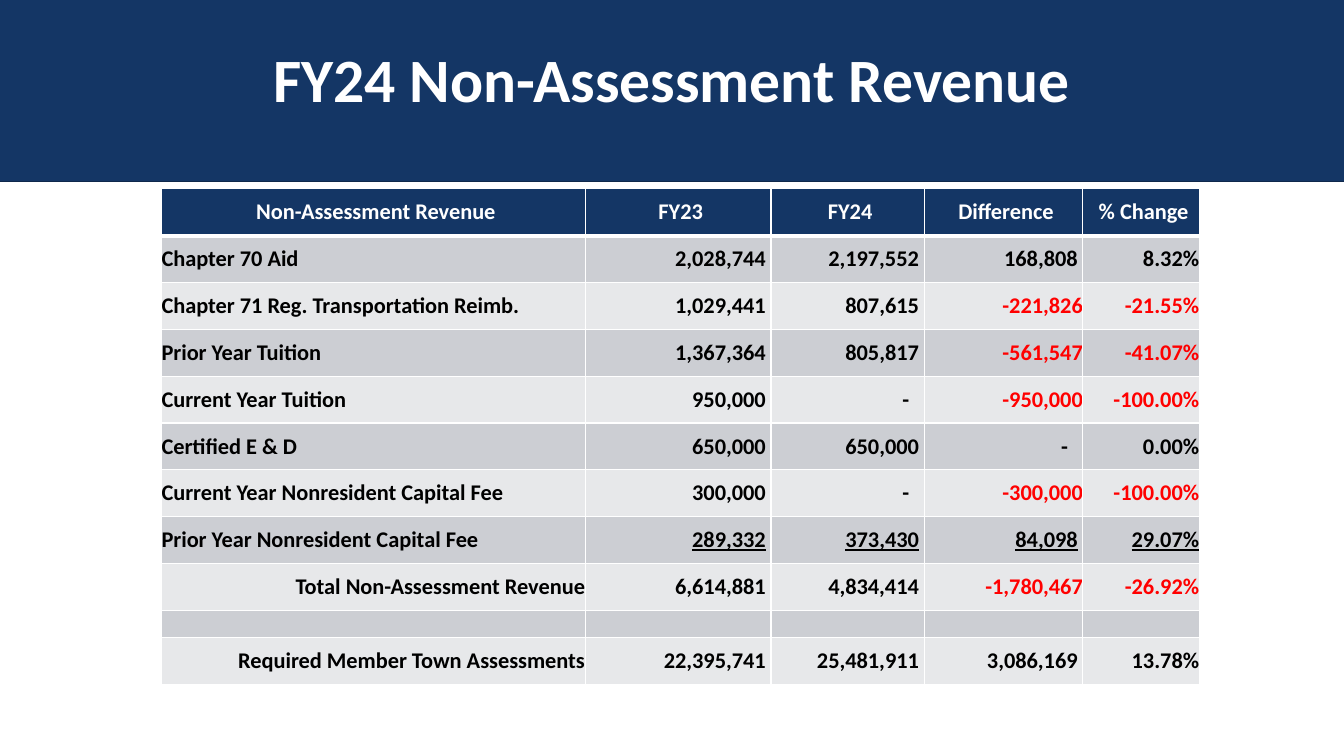
"""Builds the FY24 non-assessment revenue slide."""
import pptx
import pptx.dml.color
import pptx.enum.shapes
import pptx.enum.text
import pptx.oxml
import pptx.oxml.ns
import pptx.util
from pptx.util import Cm, Pt

RGBColor = pptx.dml.color.RGBColor
NAVY = RGBColor(0x14, 0x36, 0x65)
DARK_NAVY = RGBColor(0x0F, 0x28, 0x4B)
WHITE = RGBColor(0xFF, 0xFF, 0xFF)
BLACK = RGBColor(0x00, 0x00, 0x00)
RED = RGBColor(0xFF, 0x00, 0x00)
DARK_BAND = RGBColor(0xCC, 0xCE, 0xD3)
LIGHT_BAND = RGBColor(0xE7, 0xE8, 0xEA)
ALIGN = pptx.enum.text.PP_ALIGN
MIDDLE = pptx.enum.text.MSO_ANCHOR.MIDDLE

REVENUE = [
    ("Non-Assessment Revenue", "FY23", "FY24", "Difference", "% Change"),
    ("Chapter 70 Aid", "2,028,744", "2,197,552", "168,808", "8.32%"),
    ("Chapter 71 Reg. Transportation Reimb.", "1,029,441", "807,615", "-221,826", "-21.55%"),
    ("Prior Year Tuition", "1,367,364", "805,817", "-561,547", "-41.07%"),
    ("Current Year Tuition", "950,000", "-", "-950,000", "-100.00%"),
    ("Certified E & D", "650,000", "650,000", "-", "0.00%"),
    ("Current Year Nonresident Capital Fee", "300,000", "-", "-300,000", "-100.00%"),
    ("Prior Year Nonresident Capital Fee", "289,332", "373,430", "84,098", "29.07%"),
    ("Total Non-Assessment Revenue", "6,614,881", "4,834,414", "-1,780,467", "-26.92%"),
    ("", "", "", "", ""),
    ("Required Member Town Assessments", "22,395,741", "25,481,911", "3,086,169", "13.78%"),
]
COLUMN_WIDTHS = [10.68, 4.68, 3.86, 4, 2.93]
ROW_HEIGHT, SPACER_HEIGHT = 1.18, 0.68
LAST_ITEM_ROW, SPACER_ROW = 7, 9
DIGIT_GAP, DASH_GAP = Cm(0.13), Cm(0.38)


def format_text(paragraph, size, color, align):
    paragraph.alignment = align
    for run in paragraph.runs:
        run.font.name = "Calibri"
        run.font.size = Pt(size)
        run.font.bold = True
        run.font.color.rgb = color


def add_border(cell, side, width):
    cell._tc.get_or_add_tcPr().append(pptx.oxml.parse_xml(
        f'<a:{side} {pptx.oxml.ns.nsdecls("a")} w="{Pt(width)}"><a:solidFill>'
        f'<a:srgbClr val="{WHITE}"/></a:solidFill></a:{side}>'))


presentation = pptx.Presentation()
presentation.slide_width, presentation.slide_height = Cm(33.87), Cm(19.05)
slide = presentation.slides.add_slide(presentation.slide_layouts[6])

banner = slide.shapes.add_shape(
    pptx.enum.shapes.MSO_SHAPE.RECTANGLE, Cm(-0.36), Cm(-0.3), Cm(34.52), Cm(4.88))
banner.shadow.inherit = False
banner.fill.solid()
banner.fill.fore_color.rgb = NAVY
banner.line.color.rgb = DARK_NAVY
banner.line.width = Pt(1)

title = slide.shapes.add_textbox(Cm(2.34), Cm(0.23), Cm(29.21), Cm(3.68)).text_frame
title.word_wrap = True
title.vertical_anchor = MIDDLE
title.text = "FY24 Non-Assessment Revenue"
title.paragraphs[0].line_spacing = 0.9
format_text(title.paragraphs[0], 44, WHITE, ALIGN.CENTER)

table_height = ROW_HEIGHT * (len(REVENUE) - 1) + SPACER_HEIGHT
revenue_table = slide.shapes.add_table(
    len(REVENUE), len(COLUMN_WIDTHS), Cm(4.07), Cm(4.76),
    Cm(sum(COLUMN_WIDTHS)), Cm(table_height)).table
for column, width in zip(revenue_table.columns, COLUMN_WIDTHS):
    column.width = Cm(width)

for row, entries in enumerate(REVENUE):
    revenue_table.rows[row].height = Cm(SPACER_HEIGHT if row == SPACER_ROW else ROW_HEIGHT)
    for column, entry in enumerate(entries):
        cell = revenue_table.cell(row, column)
        cell.margin_left = cell.margin_right = cell.margin_top = cell.margin_bottom = 0
        cell.vertical_anchor = MIDDLE
        cell.text_frame.text = entry
        paragraph = cell.text_frame.paragraphs[0]

        color, band = BLACK, DARK_BAND if row % 2 else LIGHT_BAND
        align = ALIGN.LEFT if column == 0 and row <= LAST_ITEM_ROW else ALIGN.RIGHT
        if row == 0:
            color, band, align = WHITE, NAVY, ALIGN.CENTER
            cell.margin_left = DIGIT_GAP
        elif entry == "-":
            cell.margin_right = DASH_GAP
        elif entry.startswith("-"):
            color = RED
        elif 0 < column < 4:
            cell.margin_right = DIGIT_GAP
        format_text(paragraph, 16, color, align)
        if row == LAST_ITEM_ROW and column > 0:
            paragraph.runs[0].font.underline = True
        if not entry:
            paragraph._p.get_or_add_endParaRPr().set("sz", "1600")

        for side, width in (("lnL", 1), ("lnR", 1), ("lnT", 3 if row == 1 else 1),
                            ("lnB", 3 if row == 0 else 1)):
            add_border(cell, side, width)
        cell.fill.solid()
        cell.fill.fore_color.rgb = band

presentation.save("out.pptx")
